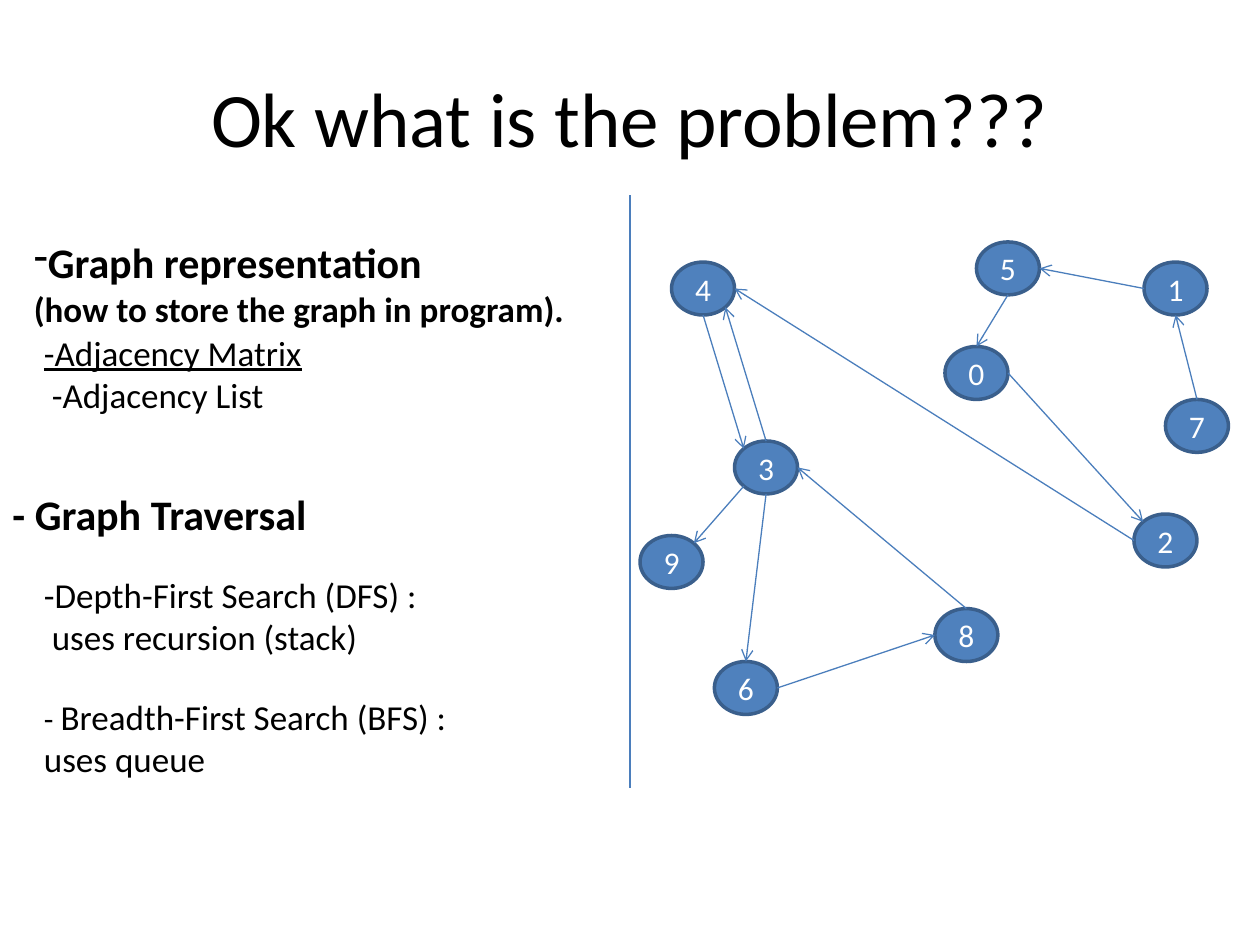
from math import cos, radians, sin

from lxml.etree import SubElement
from pptx import Presentation
from pptx.dml.color import RGBColor
from pptx.enum.shapes import MSO_CONNECTOR, MSO_SHAPE
from pptx.enum.text import MSO_ANCHOR, PP_ALIGN
from pptx.oxml.ns import qn
from pptx.util import Inches, Pt

BLACK = RGBColor(0x00, 0x00, 0x00)
WHITE = RGBColor(0xFF, 0xFF, 0xFF)
NODE_FILL = RGBColor(0x4F, 0x81, 0xBD)
NODE_BORDER = RGBColor(0x3A, 0x5F, 0x8C)
EDGE_BLUE = RGBColor(0x4B, 0x7E, 0xBC)
FONT = "Calibri"
NODE_WIDTH, NODE_HEIGHT = 0.5, 0.42

NODES = {
    "0": (7.5, 2.75),
    "4": (5.33, 2.08),
    "3": (5.83, 3.5),
    "1": (9.08, 2.08),
    "2": (9, 4.08),
    "5": (7.75, 1.92),
    "8": (7.42, 4.83),
    "9": (5.08, 4.25),
    "7": (9.25, 3.17),
    "6": (5.67, 5.25),
}

SIDE_ANGLES = {
    "right": 0, "bottom right": 45, "bottom": 90, "bottom left": 135,
    "left": 180, "top left": 225, "top": 270, "top right": 315,
}

EDGES = [
    ("0", "right", "2", "top left"),
    ("5", "bottom", "0", "top"),
    ("2", "left", "4", "right"),
    ("1", "left", "5", "right"),
    ("4", "bottom", "3", "top left"),
    ("3", "top", "4", "bottom right"),
    ("3", "bottom", "6", "top"),
    ("6", "right", "8", "left"),
    ("8", "top", "3", "right"),
    ("3", "bottom left", "9", "top right"),
    ("7", "top", "1", "bottom"),
]


def style_font(font, size, color=BLACK, bold=False):
    font.name = FONT
    font.size = Pt(size)
    font.bold = bold
    font.color.rgb = color


def add_text(page, left, top, width, height, lines, size, bold=False):
    box = page.shapes.add_textbox(Inches(left), Inches(top), Inches(width), Inches(height))
    frame = box.text_frame
    frame.word_wrap = True
    frame.text = "\n".join(lines)
    for para in frame.paragraphs:
        style_font(para.font, size, bold=bold)
    return frame


def add_title(page, title):
    frame = add_text(page, 0.5, 0.3, 9, 1.25, [title], 44)
    frame.vertical_anchor = MSO_ANCHOR.MIDDLE
    frame.paragraphs[0].alignment = PP_ALIGN.CENTER


def add_dash_bullet(para):
    properties = para._p.get_or_add_pPr()
    properties.set("marL", "0")
    properties.set("indent", "0")
    SubElement(properties, qn("a:buChar")).set("char", "-")


def add_node(page, label, left, top):
    node = page.shapes.add_shape(
        MSO_SHAPE.OVAL, Inches(left), Inches(top), Inches(NODE_WIDTH), Inches(NODE_HEIGHT)
    )
    node.shadow.inherit = False
    node.fill.solid()
    node.fill.fore_color.rgb = NODE_FILL
    node.line.color.rgb = NODE_BORDER
    node.line.width = Pt(2)
    frame = node.text_frame
    frame.vertical_anchor = MSO_ANCHOR.MIDDLE
    frame.text = label
    para = frame.paragraphs[0]
    para.alignment = PP_ALIGN.CENTER
    style_font(para.font, 18, WHITE)


def rim_point(label, side):
    left, top = NODES[label]
    angle = radians(SIDE_ANGLES[side])
    return (
        left + NODE_WIDTH / 2 * (1 + cos(angle)),
        top + NODE_HEIGHT / 2 * (1 + sin(angle)),
    )


def add_line(page, start, end, arrow=False):
    line = page.shapes.add_connector(
        MSO_CONNECTOR.STRAIGHT, *(Inches(value) for value in (*start, *end))
    )
    line.line.color.rgb = EDGE_BLUE
    line.line.width = Pt(0.75)
    if arrow:
        SubElement(line.line._get_or_add_ln(), qn("a:tailEnd")).set("type", "arrow")
    SubElement(line._element.spPr, qn("a:effectLst"))


def add_graph(page):
    for label, (left, top) in NODES.items():
        add_node(page, label, left, top)
    for source, source_side, target, target_side in EDGES:
        add_line(page, rim_point(source, source_side), rim_point(target, target_side), arrow=True)


def add_topics(page):
    representation = add_text(
        page, 0.17, 1.83, 4.75, 0.84,
        ["Graph representation", "(how to store the graph in program)."], 20, bold=True,
    )
    heading = representation.paragraphs[0]
    heading.runs[0].font.size = Pt(24)
    add_dash_bullet(heading)

    storage = add_text(
        page, 0.25, 2.58, 3.92, 0.77, ["-Adjacency Matrix", " -Adjacency List"], 20
    )
    storage.paragraphs[0].font.underline = True

    add_text(page, 0, 3.83, 2.92, 0.5, ["- Graph Traversal"], 24, bold=True)

    searches = add_text(
        page, 0.25, 4.5, 4.75, 1.75,
        ["-Depth-First Search (DFS) :", " uses recursion (stack)", "- ", "uses queue"], 20,
    )
    breadth = searches.paragraphs[2]
    breadth.space_before = Pt(22)
    breadth.runs[0].font.size = Pt(18)
    breadth.add_run().text = "Breadth-First Search (BFS) :"


def main():
    deck = Presentation()
    deck.slide_width = Inches(10)
    deck.slide_height = Inches(7.5)
    page = deck.slides.add_slide(deck.slide_layouts[6])
    add_title(page, "Ok what is the problem???")
    add_line(page, (5, 1.55), (5, 6.25))
    add_graph(page)
    add_topics(page)
    deck.save("out.pptx")


if __name__ == "__main__":
    main()
